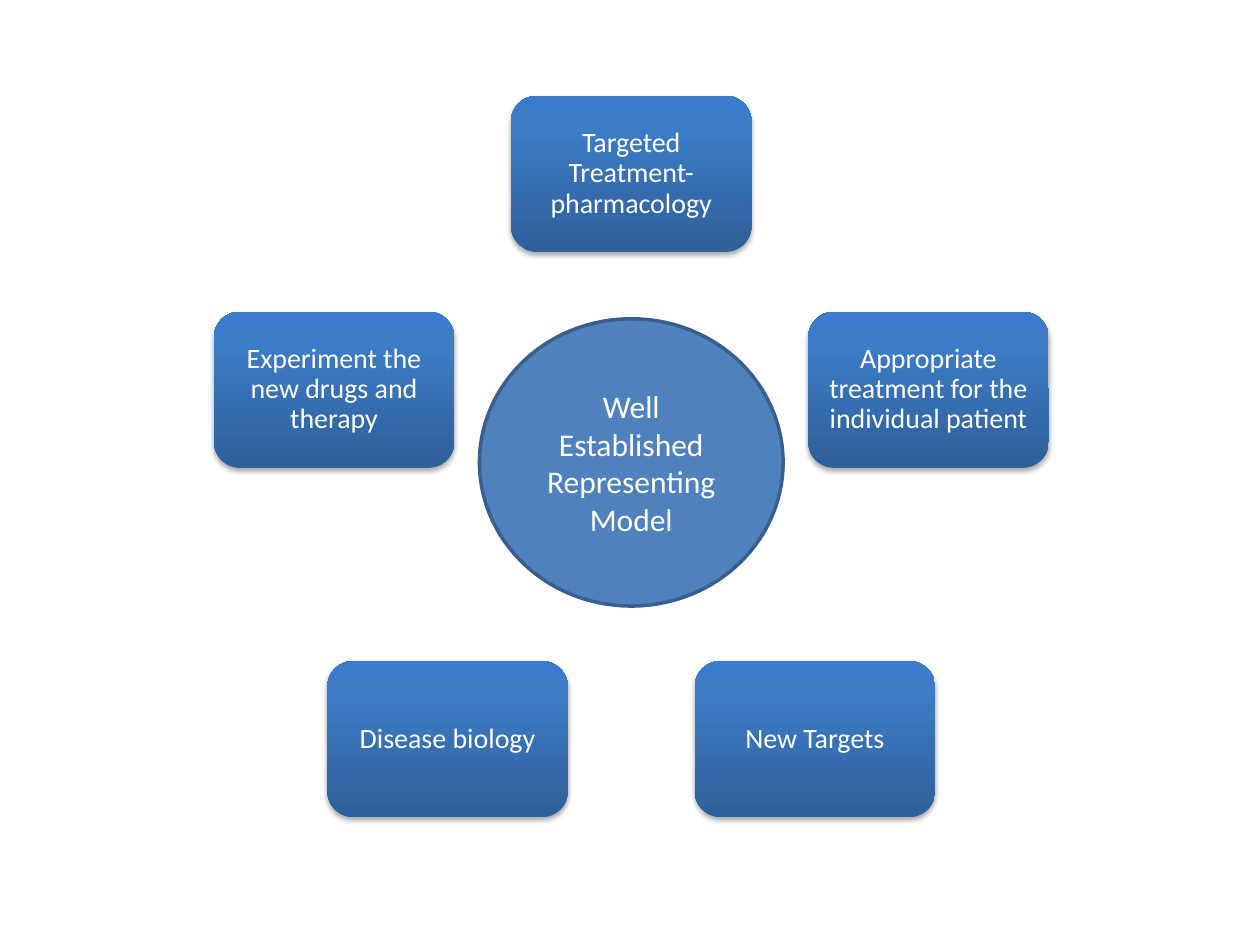
import copy
import math

from lxml import etree
from pptx import Presentation
from pptx import util as u
from pptx.dml.color import RGBColor
from pptx.enum import shapes, text
from pptx.oxml import ns

WHITE = RGBColor(0xFF, 0xFF, 0xFF)
HUB_FILL = RGBColor(0x4F, 0x81, 0xBD)
HUB_LINE = RGBColor(0x3A, 0x5F, 0x8C)
GRADIENT = [
    (0, RGBColor(0x2F, 0x5F, 0x99)),
    (0.8, RGBColor(0x3D, 0x7C, 0xC7)),
    (1, RGBColor(0x3A, 0x7C, 0xCB)),
]

# Clockwise from the top
TOPICS = [
    "Targeted Treatment-pharmacology",
    "Appropriate treatment for the individual patient",
    "New Targets",
    "Disease biology",
    "Experiment the new drugs and therapy",
]


def add_centred_shape(page, kind, centre, size, words, points):
    """Add a shape around its centre, with white centred text."""
    x, y = centre
    width, height = size
    box = page.shapes.add_shape(
        kind, u.Inches(x - width / 2), u.Inches(y - height / 2),
        u.Inches(width), u.Inches(height))
    box.shadow.inherit = False
    frame = box.text_frame
    frame.word_wrap = True
    frame.vertical_anchor = text.MSO_ANCHOR.MIDDLE
    para = frame.paragraphs[0]
    para.text = words
    para.alignment = text.PP_ALIGN.CENTER
    para.font.name = "Calibri"
    para.font.size = u.Pt(points)
    para.font.color.rgb = WHITE
    return box


def fill_gradient(box):
    """Fill from dark at the bottom to light at the top."""
    box.fill.gradient()
    box.fill.gradient_angle = 90
    first = box._element.spPr.find(".//" + ns.qn("a:gs"))
    first.addnext(copy.deepcopy(first))
    for stop, (position, colour) in zip(box.fill.gradient_stops, GRADIENT):
        stop.position = position
        stop.color.rgb = colour


def add_soft_shadow(box):
    """Cast a faint shadow straight down."""
    effects = box._element.spPr.find(ns.qn("a:effectLst"))
    shadow = etree.SubElement(
        effects, ns.qn("a:outerShdw"), blurRad=str(u.Pt(3.1)),
        dist=str(u.Pt(1.8)), dir="5400000", rotWithShape="0")
    colour = etree.SubElement(shadow, ns.qn("a:srgbClr"), val="000000")
    etree.SubElement(colour, ns.qn("a:alpha"), val="35000")


def add_topic_ring(page, centre, radius, size):
    """Space the topic boxes evenly around a circle."""
    for index, topic in enumerate(TOPICS):
        angle = 2 * math.pi * index / len(TOPICS)
        spot = (centre[0] + radius * math.sin(angle),
                centre[1] - radius * math.cos(angle))
        box = add_centred_shape(
            page, shapes.MSO_SHAPE.ROUNDED_RECTANGLE, spot, size, topic, 16)
        fill_gradient(box)
        add_soft_shadow(box)
        box.line.fill.background()
        frame = box.text_frame
        frame.margin_left = frame.margin_right = u.Inches(0.07)
        frame.margin_top = frame.margin_bottom = u.Inches(0.07)
        frame.paragraphs[0].line_spacing = 0.9


def add_hub(page, centre, size):
    """Place the model ellipse in the middle."""
    hub = add_centred_shape(
        page, shapes.MSO_SHAPE.OVAL, centre, size,
        "Well Established Representing Model", 18)
    hub.fill.solid()
    hub.fill.fore_color.rgb = HUB_FILL
    hub.line.color.rgb = HUB_LINE
    hub.line.width = u.Pt(2)


def main():
    deck = Presentation()
    deck.slide_width, deck.slide_height = u.Inches(10), u.Inches(7.5)
    page = deck.slides.add_slide(deck.slide_layouts[6])
    add_topic_ring(page, centre=(5.01, 3.86), radius=2.48, size=(1.91, 1.24))
    add_hub(page, centre=(5.01, 3.67), size=(2.41, 2.28))
    deck.save("out.pptx")


if __name__ == "__main__":
    main()
